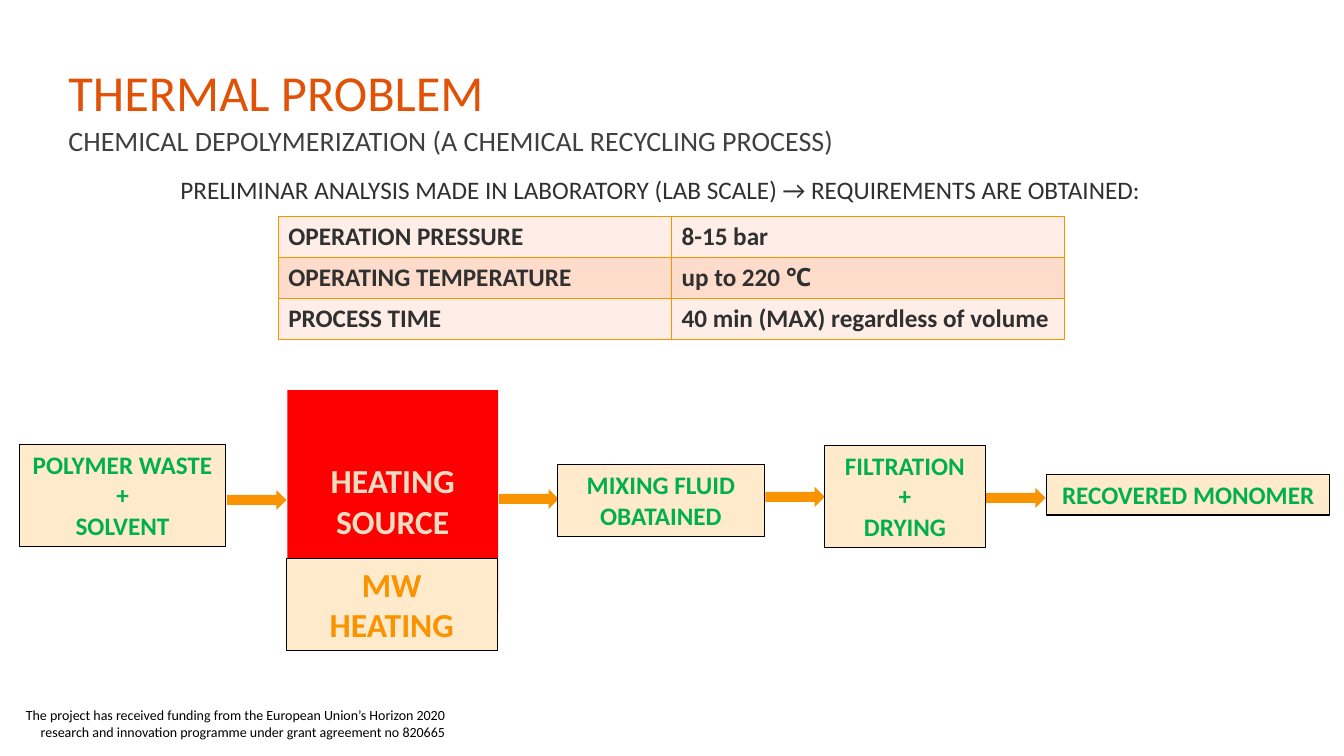
import pptx
import pptx.util
import pptx.dml.color
import pptx.enum.shapes
import pptx.enum.text
import pptx.oxml.ns
import lxml.etree

Inches = pptx.util.Inches
Pt = pptx.util.Pt
ALIGN = pptx.enum.text.PP_ALIGN
ANCHOR = pptx.enum.text.MSO_ANCHOR
FIT = pptx.enum.text.MSO_AUTO_SIZE
SHAPE = pptx.enum.shapes.MSO_SHAPE

THEME = {
    "font": "Calibri",
    "title": "E15206", "subtitle": "404040", "body": "303030", "black": "000000",
    "orange": "F99300", "cream": "FFEACB", "green": "00B050",
    "red": "FF0000", "sand": "EBDDC3", "bands": ["FEEEE7", "FDDCCC"],
    "title_size": 36, "heat_size": 24, "subtitle_size": 20, "body_size": 18, "funding_size": 10,
}

HEADINGS = [
    {"lines": ["The project has received funding from the European Union’s Horizon 2020 "
               "research and innovation programme under grant agreement no 820665"],
     "box": (0.01, 6.96, 4.5, 0.44), "size": "funding_size", "color": "black",
     "format": {"alignment": ALIGN.RIGHT}},
    {"lines": ["CHEMICAL DEPOLYMERIZATION (A CHEMICAL RECYCLING PROCESS)"],
     "box": (0.58, 1.21, 10, 0.47), "size": "subtitle_size", "color": "subtitle",
     "format": {"line_spacing": 0.9}},
    {"lines": ["THERMAL PROBLEM"],
     "box": (0.58, 0.57, 10.94, 0.69), "size": "title_size", "color": "title",
     "format": {"line_spacing": 0.9}, "anchor": ANCHOR.BOTTOM},
    {"lines": ["PRELIMINAR ANALYSIS MADE IN LABORATORY (LAB SCALE) → REQUIREMENTS ARE OBTAINED:"],
     "box": (1.69, 1.68, 9.89, 0.4), "size": "body_size", "color": "body", "format": {}},
]

REQUIREMENTS = [
    ("OPERATION PRESSURE", "8-15 bar"),
    ("OPERATING TEMPERATURE", "up to 220 ℃"),
    ("PROCESS TIME", "40 min (MAX) regardless of volume"),
]
REQUIREMENTS_BOX = (2.76, 2.15, 7.8, 1.22)

STAGE = {"fill": "cream", "outline": "black", "size": "body_size", "color": "green"}
STAGES = [
    {**STAGE, "lines": ["POLYMER WASTE", "+", "SOLVENT"],
     "box": (0.19, 4.41, 2.05, 1.01), "arrow_top": 4.86},
    {**STAGE, "lines": ["HEATING SOURCE"], "box": (2.85, 3.87, 2.09, 2.19), "arrow_top": 4.85,
     "fill": "red", "outline": None, "size": "heat_size", "color": "sand"},
    {**STAGE, "lines": ["MIXING FLUID OBATAINED"],
     "box": (5.53, 4.61, 2.05, 0.71), "arrow_top": 4.83},
    {**STAGE, "lines": ["FILTRATION", "+", "DRYING"],
     "box": (8.18, 4.42, 1.59, 1.01), "arrow_top": 4.84},
    {**STAGE, "lines": ["RECOVERED MONOMER"], "box": (10.38, 4.71, 2.81, 0.4)},
    {**STAGE, "lines": ["MW HEATING"], "box": (2.84, 5.54, 2.09, 0.91),
     "size": "heat_size", "color": "orange"},
]
ARROW_WIDTH, ARROW_HEIGHT = 0.59, 0.2


def rgb(name):
    return pptx.dml.color.RGBColor.from_string(THEME.get(name, name))


def write(frame, lines, size, color, bold, paragraph_format):
    for index, line in enumerate(lines):
        paragraph = frame.add_paragraph() if index else frame.paragraphs[0]
        for key, value in paragraph_format.items():
            setattr(paragraph, key, value)
        run = paragraph.add_run()
        run.text = line
        font_format = {"name": THEME["font"], "size": Pt(THEME[size]), "bold": bold}
        for key, value in font_format.items():
            setattr(run.font, key, value)
        run.font.color.rgb = rgb(color)


def add_heading(slide, heading):
    frame = slide.shapes.add_textbox(*map(Inches, heading["box"])).text_frame
    frame.word_wrap = True
    frame.vertical_anchor = heading.get("anchor", ANCHOR.TOP)
    write(frame, heading["lines"], heading["size"], heading["color"], False, heading["format"])


def add_block(slide, preset, box, fill, outline=None):
    block = slide.shapes.add_shape(preset, *map(Inches, box))
    block.shadow.inherit = False
    block.fill.solid()
    block.fill.fore_color.rgb = rgb(fill)
    if outline:
        block.line.color.rgb = rgb(outline)
        block.line.width = Pt(0.75)
    else:
        block.line.fill.background()
    return block


def add_stage(slide, stage):
    frame = add_block(slide, SHAPE.RECTANGLE, stage["box"], stage["fill"], stage["outline"]).text_frame
    frame_format = {
        "word_wrap": True,
        "vertical_anchor": ANCHOR.TOP if stage["outline"] else ANCHOR.MIDDLE,
        "auto_size": FIT.SHAPE_TO_FIT_TEXT if stage["outline"] else FIT.NONE,
    }
    for key, value in frame_format.items():
        setattr(frame, key, value)
    write(frame, stage["lines"], stage["size"], stage["color"], True, {"alignment": ALIGN.CENTER})
    if "arrow_top" in stage:
        left, _, width, _ = stage["box"]
        arrow_box = (left + width + 0.01, stage["arrow_top"], ARROW_WIDTH, ARROW_HEIGHT)
        add_block(slide, SHAPE.RIGHT_ARROW, arrow_box, "orange")


def add_borders(cell):
    properties = cell._tc.get_or_add_tcPr()
    for position, side in enumerate(("a:lnL", "a:lnR", "a:lnT", "a:lnB")):
        border = lxml.etree.Element(pptx.oxml.ns.qn(side), w=str(Pt(1)))
        fill = lxml.etree.SubElement(border, pptx.oxml.ns.qn("a:solidFill"))
        lxml.etree.SubElement(fill, pptx.oxml.ns.qn("a:srgbClr"), val=THEME["orange"])
        properties.insert(position, border)


def add_requirements(slide):
    frame = slide.shapes.add_table(len(REQUIREMENTS), 2, *map(Inches, REQUIREMENTS_BOX))
    for row, texts in enumerate(REQUIREMENTS):
        for column, text in enumerate(texts):
            cell = frame.table.cell(row, column)
            cell.fill.solid()
            cell.fill.fore_color.rgb = rgb(THEME["bands"][row % 2])
            add_borders(cell)
            write(cell.text_frame, [text], "body_size", "body", True, {})


def main():
    deck = pptx.Presentation()
    deck.slide_width, deck.slide_height = Inches(13.33), Inches(7.5)
    slide = deck.slides.add_slide(deck.slide_layouts[6])
    for heading in HEADINGS:
        add_heading(slide, heading)
    add_requirements(slide)
    for stage in STAGES:
        add_stage(slide, stage)
    deck.save("out.pptx")


if __name__ == "__main__":
    main()
